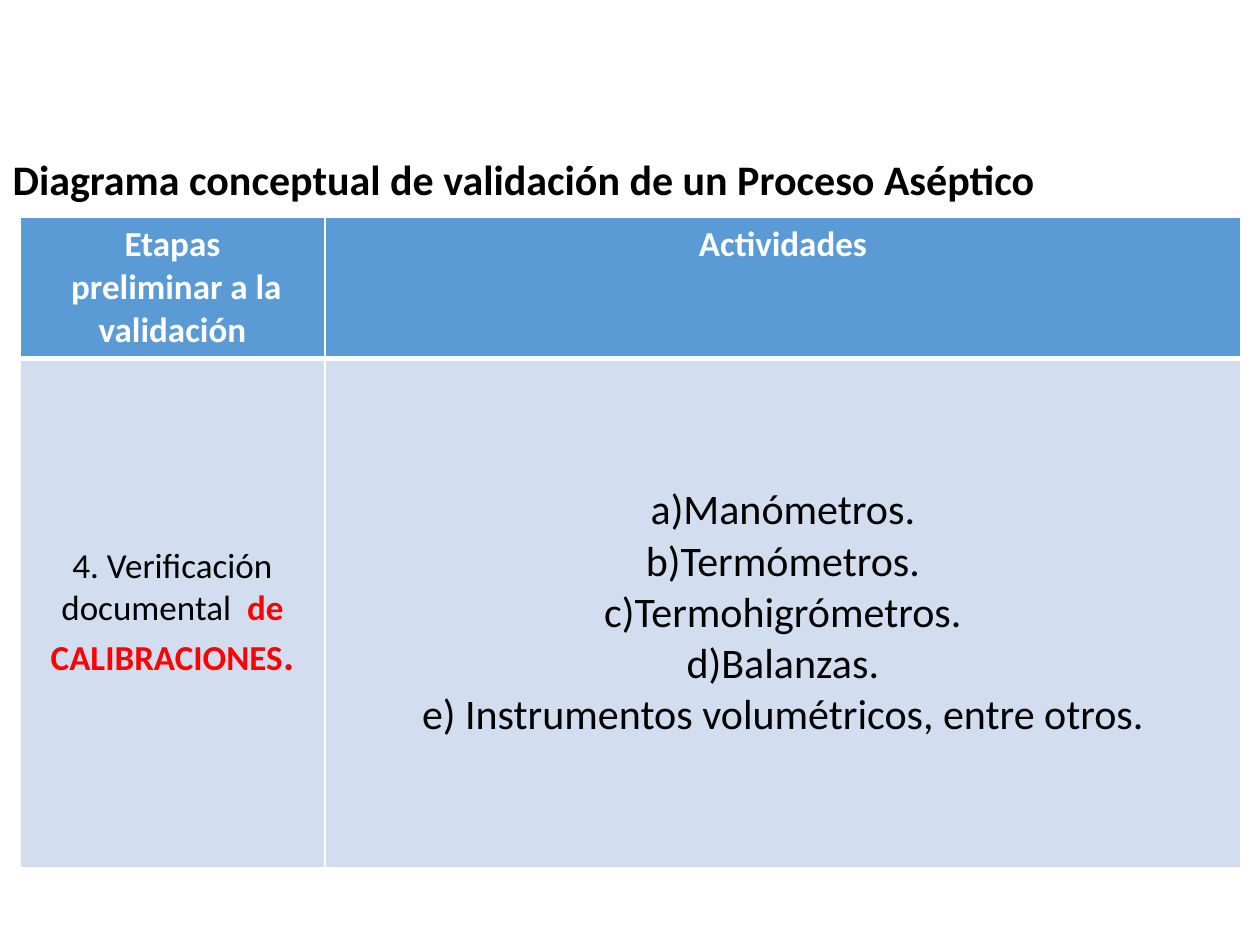
import pptx
import pptx.util
import pptx.dml.color
import pptx.enum.text
import pptx.oxml.ns
from lxml import etree

WHITE = pptx.dml.color.RGBColor(0xFF, 0xFF, 0xFF)
BLACK = pptx.dml.color.RGBColor(0x00, 0x00, 0x00)
RED = pptx.dml.color.RGBColor(0xFF, 0x00, 0x00)
HEADER_BLUE = pptx.dml.color.RGBColor(0x5B, 0x9B, 0xD5)
BODY_BLUE = pptx.dml.color.RGBColor(0xD2, 0xDE, 0xEF)

PX_PER_INCH = 126
TOP = pptx.enum.text.MSO_ANCHOR.TOP
MIDDLE = pptx.enum.text.MSO_ANCHOR.MIDDLE
LEFT = pptx.enum.text.PP_ALIGN.LEFT
CENTER = pptx.enum.text.PP_ALIGN.CENTER


def px(length):
    """Turn a length in px into EMU."""
    return pptx.util.Inches(length / PX_PER_INCH)


def write_paragraphs(frame, paragraphs, align):
    """Write paragraphs made of (text, size, colour, bold) runs."""
    for index, runs in enumerate(paragraphs):
        paragraph = frame.paragraphs[0] if index == 0 else frame.add_paragraph()
        paragraph.alignment = align
        for text, size, color, bold in runs:
            run = paragraph.add_run()
            run.text = text
            run.font.name = "Calibri"
            run.font.size = pptx.util.Pt(size)
            run.font.bold = bold
            run.font.color.rgb = color


def set_borders(cell, bottom_width):
    """Draw white cell borders, 1 pt except for the bottom one."""
    properties = cell._tc.get_or_add_tcPr()
    for side, width in zip("LRTB", (1, 1, 1, bottom_width)):
        line = etree.SubElement(properties, pptx.oxml.ns.qn(f"a:ln{side}"), w=str(pptx.util.Pt(width)))
        fill = etree.SubElement(line, pptx.oxml.ns.qn("a:solidFill"))
        etree.SubElement(fill, pptx.oxml.ns.qn("a:srgbClr"), val=str(WHITE))


def add_heading(slide, left, top, width, height):
    """Place the slide title in its box."""
    heading = slide.shapes.title
    heading.left, heading.top, heading.width, heading.height = map(px, (left, top, width, height))
    frame = heading.text_frame
    frame.word_wrap = True
    frame.auto_size = pptx.enum.text.MSO_AUTO_SIZE.NONE
    frame.vertical_anchor = TOP
    title = "Diagrama conceptual de validación de un Proceso Aséptico"
    write_paragraphs(frame, [[(title, 24, BLACK, True)]], LEFT)


def add_stage_table(slide, left, top, width, height):
    """Place the table of preliminary stages and their activities."""
    stage_width, header_height = 305, 138
    table = slide.shapes.add_table(2, 2, px(left), px(top), px(width), px(height)).table
    table.columns[0].width = px(stage_width)
    table.columns[1].width = px(width - stage_width)
    table.rows[0].height = px(header_height)
    table.rows[1].height = px(height - header_height)

    stage_header = [[(text, 20, WHITE, True)] for text in ("Etapas", " preliminar a la validación")]
    activity_header = [[("Actividades", 20, WHITE, True)]]
    stage = [[
        ("4. Verificación documental  ", 20, BLACK, False),
        ("de CALIBRACIONES", 20, RED, True),
        (".", 24, RED, True),
    ]]
    activities = [[(text, 24, BLACK, False)] for text in (
        "a)Manómetros.",
        "b)Termómetros.",
        "c)Termohigrómetros.",
        "d)Balanzas.",
        "e) Instrumentos volumétricos, entre otros.",
    )]
    rows = (
        ((stage_header, activity_header), HEADER_BLUE, TOP, 3),
        ((stage, activities), BODY_BLUE, MIDDLE, 1),
    )
    for row, (contents, color, anchor, bottom_width) in enumerate(rows):
        for column, paragraphs in enumerate(contents):
            cell = table.cell(row, column)
            set_borders(cell, bottom_width)
            cell.fill.solid()
            cell.fill.fore_color.rgb = color
            cell.vertical_anchor = anchor
            write_paragraphs(cell.text_frame, paragraphs, CENTER)


def main():
    """Build the slide and save it."""
    presentation = pptx.Presentation()
    presentation.slide_width = px(1260)
    presentation.slide_height = px(945)
    slide = presentation.slides.add_slide(presentation.slide_layouts[5])
    add_stage_table(slide, 20, 217, 1221, 648)
    add_heading(slide, 0, 147, 1077, 63)
    presentation.save("out.pptx")


if __name__ == "__main__":
    main()
